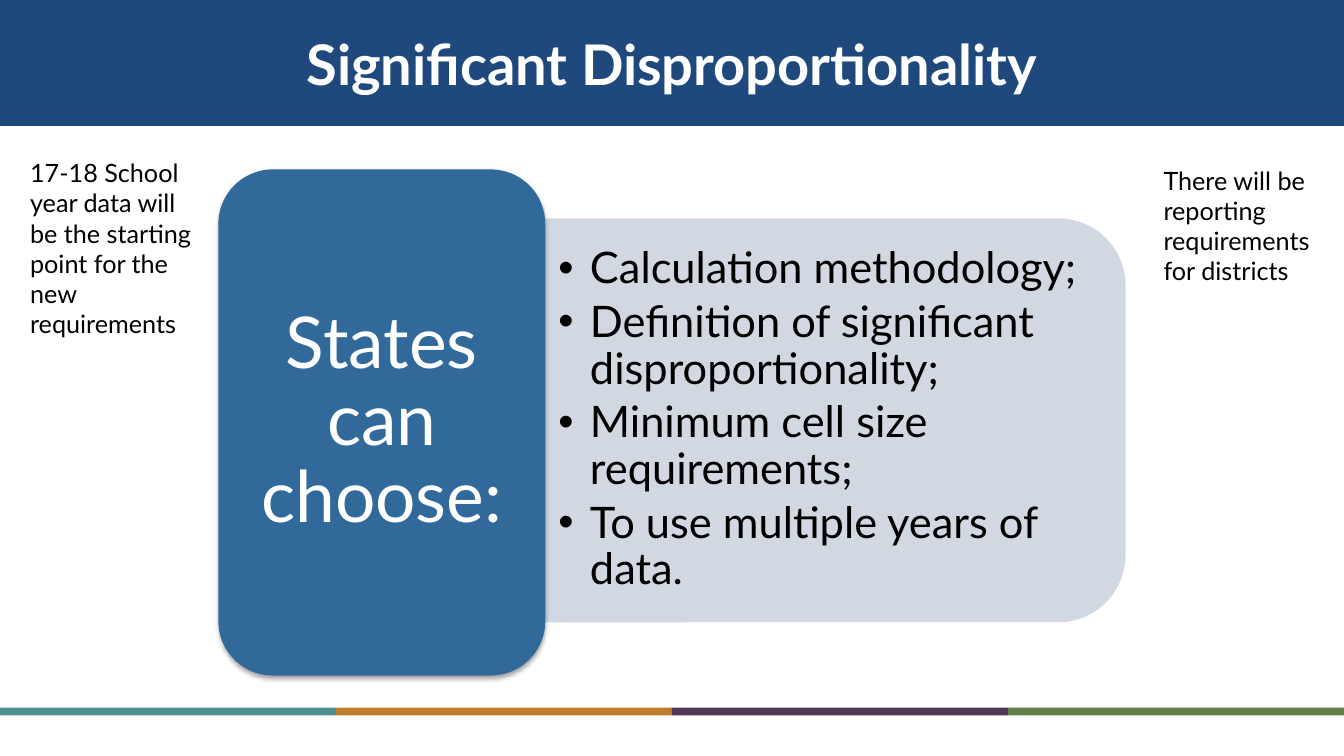
from lxml import etree
from pptx import Presentation
from pptx.dml.color import RGBColor
from pptx.enum.shapes import MSO_SHAPE
from pptx.enum.text import MSO_ANCHOR, MSO_AUTO_SIZE, PP_ALIGN
from pptx.oxml.ns import qn
from pptx.util import Pt

RECT = MSO_SHAPE.RECTANGLE
ROUND = MSO_SHAPE.ROUNDED_RECTANGLE
TAB = MSO_SHAPE.ROUND_2_SAME_RECTANGLE
MIDDLE = MSO_ANCHOR.MIDDLE
CENTER = PP_ALIGN.CENTER
NO_FIT = MSO_AUTO_SIZE.NONE
GROW = MSO_AUTO_SIZE.SHAPE_TO_FIT_TEXT

WIDE, HIGH = 960, 540
FONT = "Lato"
STRIPES = ["4E8E94", "C17E2A", "4F3858", "617E48"]
CHOICES = [
    "Calculation methodology;",
    "Definition of significant disproportionality;",
    "Minimum cell size requirements;",
    "To use multiple years of data.",
]


def paint(thing, color):
    thing.fill.solid()
    thing.fill.fore_color.rgb = RGBColor.from_string(color)


def place(shape, left, top, width, height):
    shape.left, shape.top = Pt(left), Pt(top)
    shape.width, shape.height = Pt(width), Pt(height)


def block(slide, kind, color, box):
    shape = slide.shapes.add_shape(kind, *map(Pt, box))
    paint(shape, color)
    shape.line.fill.background()
    shape.shadow.inherit = False
    return shape


def set_font(par, size, color, bold=False):
    font = par.font
    font.name, font.size, font.bold = FONT, Pt(size), bold
    font.color.rgb = RGBColor.from_string(color)


def set_frame(frame, side, edge):
    """Wrap and centre the text vertically, with side and top/bottom insets."""
    frame.word_wrap = True
    frame.auto_size = NO_FIT
    frame.vertical_anchor = MIDDLE
    frame.margin_left = frame.margin_right = Pt(side)
    frame.margin_top = frame.margin_bottom = Pt(edge)


def set_alpha(parent, percent):
    for color in parent.iter(qn("a:srgbClr")):
        etree.SubElement(color, qn("a:alpha"), val=str(percent * 1000))


def add_shadow(shape):
    effects = shape.element.spPr.find(qn("a:effectLst"))
    drop = etree.SubElement(
        effects, qn("a:outerShdw"), blurRad=str(Pt(3.1)), dist=str(Pt(1.8)),
        dir="5400000", algn="ctr", rotWithShape="0")
    etree.SubElement(drop, qn("a:srgbClr"), val="000000")
    set_alpha(drop, 35)


def add_bullet(par, indent):
    props = par._p.get_or_add_pPr()
    props.set("marL", str(Pt(indent)))
    props.set("indent", str(-Pt(indent)))
    etree.SubElement(props, qn("a:buChar"), char="•")


def add_stripes(slide, left, top, width, height):
    step = width / len(STRIPES)
    for i, color in enumerate(STRIPES):
        block(slide, RECT, color, (left + i * step, top, step, height))


def add_title(slide, text, box):
    title = slide.shapes.title
    place(title, *box)
    paint(title, "1F497D")
    set_frame(title.text_frame, 7.2, 3.6)
    title.text_frame.text = text
    par = title.text_frame.paragraphs[0]
    par.alignment = CENTER
    set_font(par, 40, "FFFFFF", True)


def add_panel(slide, left, top, width, height):
    """Panel rounded on its right side, with the bulleted list on it."""
    shift = (width - height) / 2
    panel = block(slide, TAB, "CED4DE",
                  (left + shift, top - shift, height, width))
    panel.rotation = 90
    set_alpha(panel.element.spPr, 90)

    body = slide.placeholders[1]
    panel.element.addnext(body.element)
    place(body, left, top + 14, width - 14, height - 28)
    frame = body.text_frame
    set_frame(frame, 9.4, 4.3)
    frame.text = "\n".join(CHOICES)
    for par in frame.paragraphs:
        par.level = 1
        par.line_spacing = 0.9
        par.space_before = Pt(0)
        par.space_after = Pt(4.7)
        add_bullet(par, 22.5)
        set_font(par, 31, "000000")


def add_card(slide, text, box):
    card = block(slide, ROUND, "316A9A", box)
    add_shadow(card)
    set_frame(card.text_frame, 14, 8)
    card.text_frame.text = text
    par = card.text_frame.paragraphs[0]
    par.alignment = CENTER
    par.line_spacing = 0.9
    set_font(par, 51, "FFFFFF")


def add_note(slide, text, box):
    frame = slide.shapes.add_textbox(*map(Pt, box)).text_frame
    frame.word_wrap = True
    frame.auto_size = GROW
    frame.text = text
    set_font(frame.paragraphs[0], 18, "000000")


def main():
    deck = Presentation()
    deck.slide_width, deck.slide_height = Pt(WIDE), Pt(HIGH)
    slide = deck.slides.add_slide(deck.slide_layouts[1])
    add_stripes(slide, 0, 505.5, WIDE, 5.6)
    add_title(slide, "Significant Disproportionality", (0, 0, WIDE, 90))
    add_panel(slide, 389.5, 156, 414.5, 288.5)
    add_card(slide, "States can choose:", (156, 121, 233.5, 361.5))
    add_note(slide, "There will be reporting requirements for districts",
             (824, 114.2, 129, 94))
    add_note(slide, "17-18 School year data will be the starting point "
             "for the new requirements", (14.4, 109, 142, 117))
    deck.save("out.pptx")


if __name__ == "__main__":
    main()
